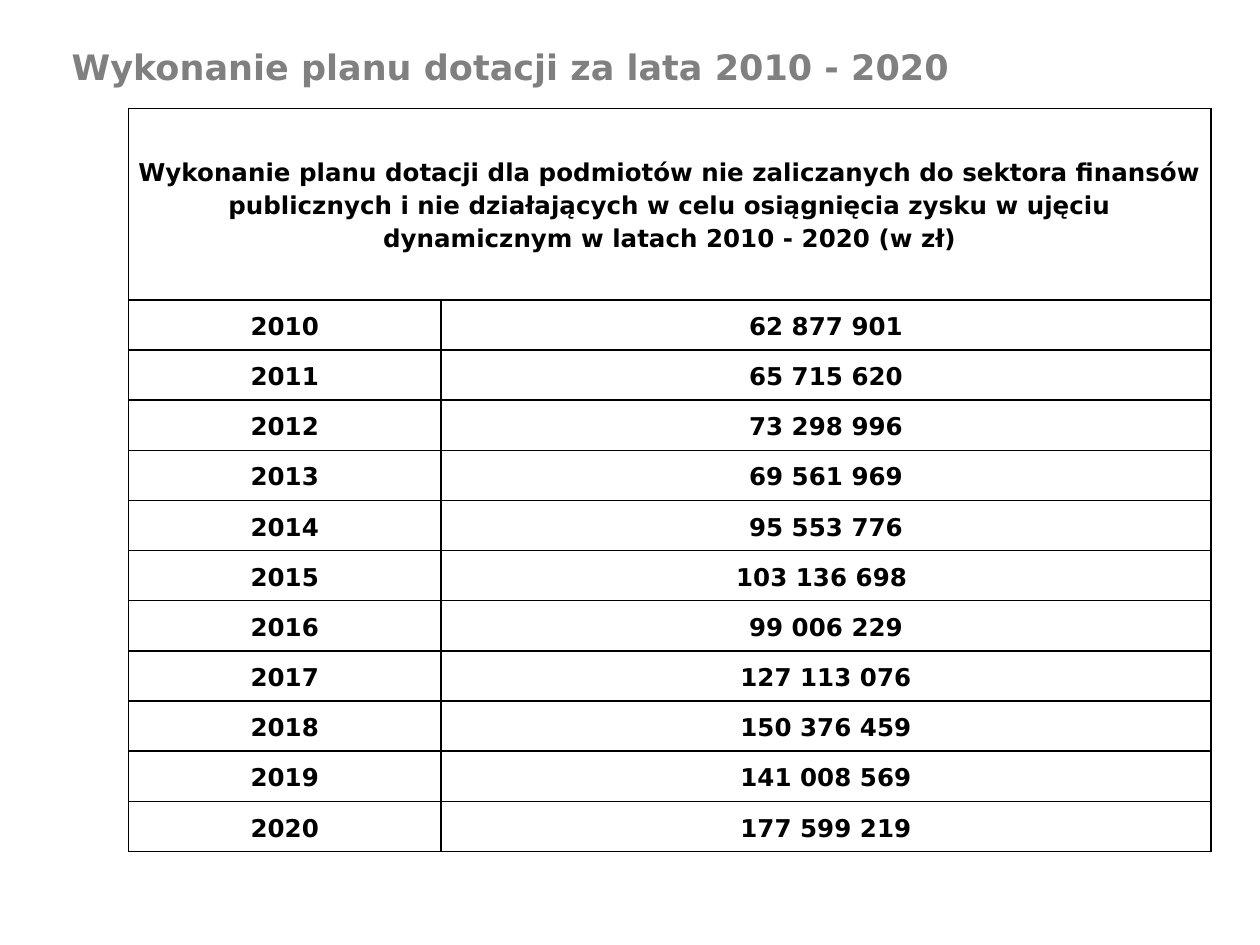
from pptx import Presentation
from pptx.dml.color import RGBColor
from pptx.enum.text import MSO_ANCHOR, MSO_AUTO_SIZE, PP_ALIGN
from pptx.oxml import parse_xml
from pptx.oxml.ns import nsdecls
from pptx.util import Inches, Pt

# Content
TITLE = "Wykonanie planu dotacji za lata 2010 - 2020"
HEADER = ("Wykonanie planu dotacji dla podmiotów nie zaliczanych do sektora "
          "finansów publicznych i nie działających w celu osiągnięcia zysku "
          "w ujęciu dynamicznym w latach 2010 - 2020 (w zł)")
FIRST_YEAR = 2010
GRANTS = ["62 877 901", "65 715 620", "73 298 996", "69 561 969",
          "95 553 776", "103 136 698 ", "99 006 229", "127 113 076",
          "150 376 459", "141 008 569", "177 599 219"]

# Theme and layout (inches)
THEME = {"font": "DejaVu Sans", "title": "808080", "text": "000000",
         "border": "000000", "title_size": 20, "cell_size": 14,
         "border_width": 1}
SLIDE = (10, 7.5)
TITLE_BOX = (0.47, 0.31, 7.42, 0.44)
TABLE_BOX = (1.02, 0.86, 8.59, 5.9)
YEAR_WIDTH, HEADER_HEIGHT = 2.48, 1.52


def style(p, size, color):
    p.font.name = THEME["font"]
    p.font.size = Pt(size)
    p.font.bold = True
    p.font.color.rgb = RGBColor.from_string(color)


def add_borders(cell):
    tc_pr = cell._tc.get_or_add_tcPr()
    for i, side in enumerate(("lnL", "lnR", "lnT", "lnB")):
        tc_pr.insert(i, parse_xml(
            f'<a:{side} {nsdecls("a")} w="{Pt(THEME["border_width"])}">'
            f'<a:solidFill><a:srgbClr val="{THEME["border"]}"/></a:solidFill>'
            f'</a:{side}>'))


def format_cell(cell):
    cell.fill.background()
    add_borders(cell)
    cell.vertical_anchor = MSO_ANCHOR.MIDDLE
    cell.margin_left = cell.margin_right = Inches(0.05)
    cell.margin_top = cell.margin_bottom = 0
    p = cell.text_frame.paragraphs[0]
    p.alignment = PP_ALIGN.CENTER
    p.line_spacing = 1.15
    style(p, THEME["cell_size"], THEME["text"])


prs = Presentation()
prs.slide_width, prs.slide_height = map(Inches, SLIDE)
slide = prs.slides.add_slide(prs.slide_layouts[6])

# Title
tf = slide.shapes.add_textbox(*map(Inches, TITLE_BOX)).text_frame
tf.word_wrap = True
tf.auto_size = MSO_AUTO_SIZE.SHAPE_TO_FIT_TEXT
tf.text = TITLE
style(tf.paragraphs[0], THEME["title_size"], THEME["title"])

# Table: one merged header row, then a row for each year
rows = [(HEADER, "")] + [(str(FIRST_YEAR + i), grant)
                         for i, grant in enumerate(GRANTS)]
table = slide.shapes.add_table(len(rows), 2, *map(Inches, TABLE_BOX)).table
table.first_row = table.horz_banding = False
table.columns[0].width = Inches(YEAR_WIDTH)
table.columns[1].width = Inches(TABLE_BOX[2] - YEAR_WIDTH)
row_height = (TABLE_BOX[3] - HEADER_HEIGHT) / len(GRANTS)
for r, texts in enumerate(rows):
    table.rows[r].height = Inches(row_height if r else HEADER_HEIGHT)
    for c, text in enumerate(texts):
        cell = table.cell(r, c)
        cell.text = text
        format_cell(cell)
table.cell(0, 0).merge(table.cell(0, 1))

prs.save("out.pptx")
